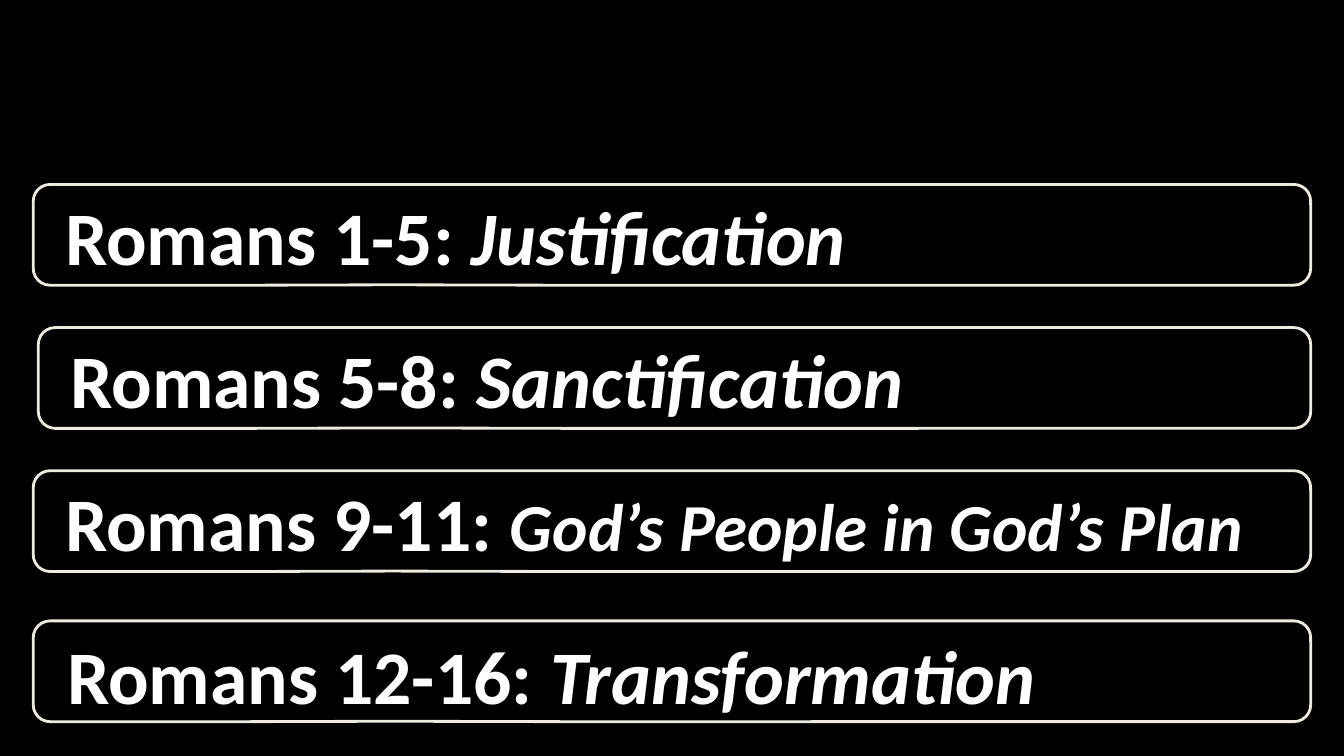
"""Builds a slide with the four sections of Romans in outlined callouts."""
from dataclasses import dataclass

from lxml.etree import SubElement
from pptx import Presentation
from pptx.dml.color import RGBColor
from pptx.enum.shapes import MSO_SHAPE
from pptx.enum.text import MSO_ANCHOR, PP_ALIGN
from pptx.oxml.ns import qn
from pptx.util import Inches, Pt


@dataclass(frozen=True)
class Theme:
    font: str = "Calibri"
    background: RGBColor = RGBColor(0x00, 0x00, 0x00)
    outline: RGBColor = RGBColor(0xEE, 0xEC, 0xE1)
    text: RGBColor = RGBColor(0xFF, 0xFF, 0xFF)
    opacity: int = 64
    outline_width: float = 2
    heading_size: int = 54
    long_topic_size: int = 48
    lead_size: int = 60


def add_text(paragraph, text, *, theme, size, italic=False):
    run = paragraph.add_run()
    run.text = text
    font = run.font
    font.name = theme.font
    font.size = Pt(size)
    font.bold = True
    font.italic = italic
    font.color.rgb = theme.text


class SlideBuilder:
    def __init__(self, presentation, theme):
        self.theme = theme
        self.slide = presentation.slides.add_slide(presentation.slide_layouts[6])

    def set_background(self):
        fill = self.slide.background.fill
        fill.solid()
        fill.fore_color.rgb = self.theme.background

    def add_callout(self, left, top, width, height):
        shape = self.slide.shapes.add_shape(
            MSO_SHAPE.ROUNDED_RECTANGULAR_CALLOUT,
            Inches(left), Inches(top), Inches(width), Inches(height),
        )
        for index, value in enumerate((-0.219, 0.496, 0.167)):
            shape.adjustments[index] = value
        shape.shadow.inherit = False
        shape.fill.solid()
        shape.fill.fore_color.rgb = self.theme.background
        color = shape.fill._xPr.find(qn("a:solidFill"))[0]
        SubElement(color, qn("a:alpha"), val=str(self.theme.opacity * 1000))
        shape.line.color.rgb = self.theme.outline
        shape.line.width = Pt(self.theme.outline_width)
        frame = shape.text_frame
        frame.word_wrap = True
        frame.vertical_anchor = MSO_ANCHOR.MIDDLE
        frame.paragraphs[0].alignment = PP_ALIGN.LEFT
        return frame.paragraphs[0]

    def add_section(self, left, top, chapters, topic, lead_size, topic_size):
        paragraph = self.add_callout(left, top, 13 - left, 1)
        add_text(paragraph, " ", theme=self.theme, size=lead_size)
        add_text(paragraph, f"Romans {chapters}: ", theme=self.theme,
                 size=self.theme.heading_size)
        add_text(paragraph, topic, theme=self.theme, size=topic_size, italic=True)


def main():
    theme = Theme()
    presentation = Presentation()
    presentation.slide_width = Inches(13.33)
    presentation.slide_height = Inches(7.5)
    builder = SlideBuilder(presentation, theme)
    builder.set_background()
    heading = theme.heading_size
    sections = (
        (0.33, 1.83, "1-5", "Justification", heading, heading),
        (0.38, 3.25, "5-8", "Sanctification", heading, heading),
        (0.33, 4.67, "9-11", "God’s People in God’s Plan", heading, theme.long_topic_size),
        (0.33, 6.16, "12-16", "Transformation", theme.lead_size, heading),
    )
    for section in sections:
        builder.add_section(*section)
    presentation.save("out.pptx")


if __name__ == "__main__":
    main()
